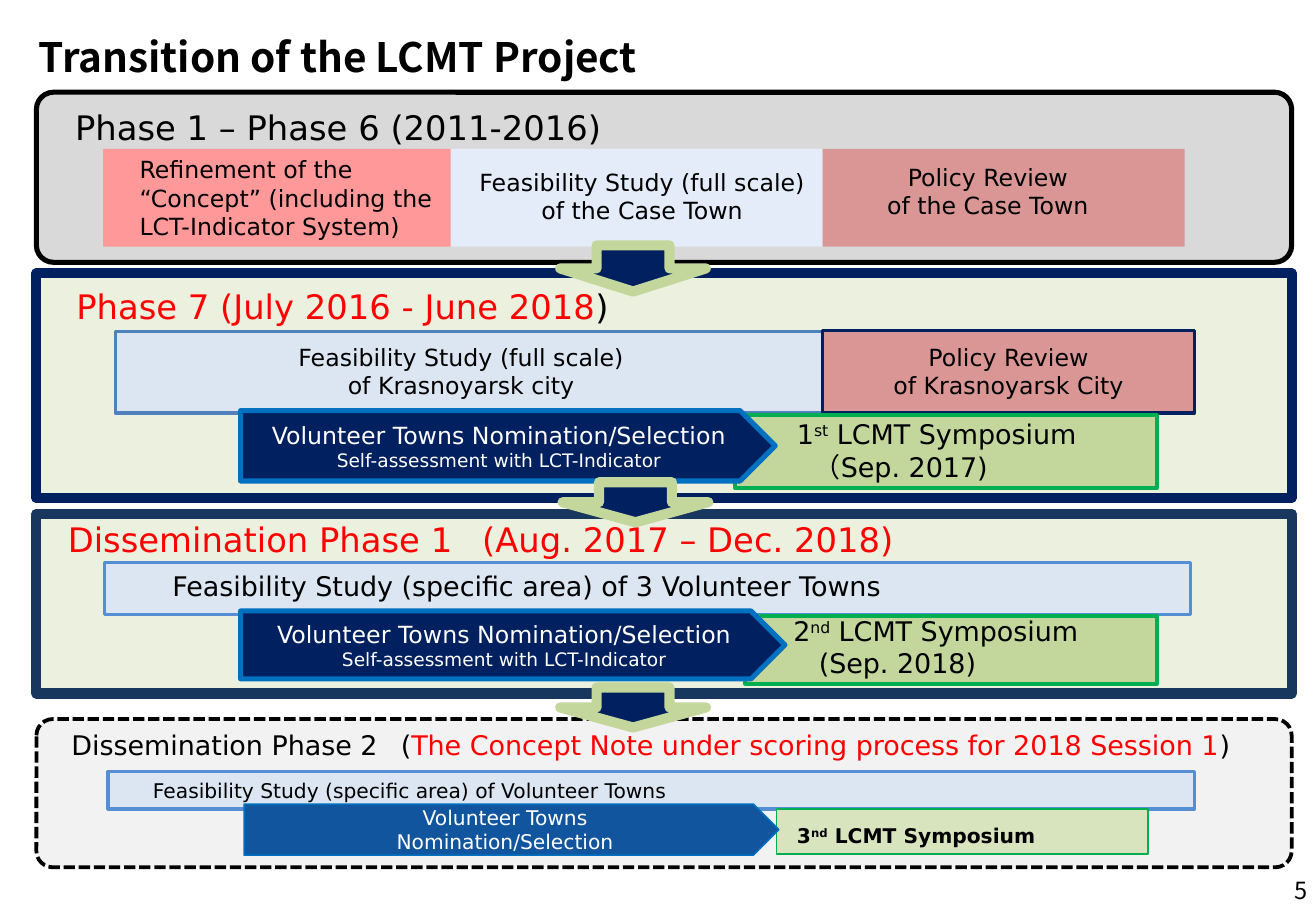
from lxml import etree
from pptx import Presentation
from pptx.dml.color import RGBColor
from pptx.enum.dml import MSO_LINE
from pptx.enum.shapes import MSO_SHAPE
from pptx.enum.text import MSO_ANCHOR, PP_ALIGN
from pptx.oxml.ns import qn
from pptx.util import Inches, Pt

RECT, ROUNDED = MSO_SHAPE.RECTANGLE, MSO_SHAPE.ROUNDED_RECTANGLE
PENTAGON, DOWN_ARROW = MSO_SHAPE.PENTAGON, MSO_SHAPE.DOWN_ARROW
LEFT, CENTER, RIGHT = PP_ALIGN.LEFT, PP_ALIGN.CENTER, PP_ALIGN.RIGHT
TOP, MIDDLE = MSO_ANCHOR.TOP, MSO_ANCHOR.MIDDLE
DASH = MSO_LINE.SQUARE_DOT

BODY_FONT, TITLE_FONT = "DejaVu Sans", "Noto Sans CJK JP"
BLACK, WHITE, RED = "000000", "FFFFFF", "FF0000"
NAVY, BLUE, SKY, PALE_BLUE = "002060", "0070C0", "558ED5", "DCE6F2"
GREEN, LEAF, PALE_GREEN = "00B050", "C3D69B", "EBF1DE"
ROSE = "D99694"
SUPER = "super"
CELL = 0.1  # grid cell in inches: 108.3 columns by 75 rows
PANEL_LEFT, PANEL_WIDTH = 3, 103.3


def rgb(color):
    return RGBColor.from_string(color)


def grid(cells):
    return Inches(round(cells * CELL, 3))


class Board:
    def __init__(self):
        self.deck = Presentation()
        self.deck.slide_width, self.deck.slide_height = grid(108.3), grid(75)
        self.slide = self.deck.slides.add_slide(self.deck.slide_layouts[5])

    def fill_text(self, frame, paragraphs, sizes, color=BLACK, align=LEFT, anchor=TOP,
                  font=BODY_FONT, bold=False, indent=0, tab=0):
        """Each paragraph is a string or a list of (text, colour or SUPER) runs.

        The last size holds for all further paragraphs; indent moves those after the first.
        """
        frame.word_wrap, frame.vertical_anchor = True, anchor
        for index, content in enumerate(paragraphs):
            paragraph = frame.paragraphs[0] if index == 0 else frame.add_paragraph()
            paragraph.alignment = align
            style = paragraph.font
            style.name, style.bold = font, bold
            style.size = Pt(sizes[min(index, len(sizes) - 1)])
            style.color.rgb = rgb(color)
            runs = [(content, None)] if isinstance(content, str) else content
            for words, accent in runs:
                run = paragraph.add_run()
                run.text = words
                if accent == SUPER:
                    run.font._element.set("baseline", "30000")
                elif accent:
                    run.font.color.rgb = rgb(accent)
            properties = paragraph._p.get_or_add_pPr()
            if indent and index:
                properties.set("marL", str(grid(indent)))
            if tab:
                stops = etree.Element(qn("a:tabLst"))
                etree.SubElement(stops, qn("a:tab"), pos=str(grid(tab)), algn="l")
                properties.insert(0, stops)

    def title(self, words, box):
        heading = self.slide.shapes.title
        heading.left, heading.top, heading.width, heading.height = map(grid, box)
        self.fill_text(heading.text_frame, [words], [24], anchor=MIDDLE, font=TITLE_FONT,
                       bold=True)

    def text(self, box, paragraphs, sizes, **style):
        label = self.slide.shapes.add_textbox(*map(grid, box))
        self.fill_text(label.text_frame, paragraphs, sizes, **style)

    def shape(self, kind, box, fill, line=None, weight=2, corner=None, dash=None):
        block = self.slide.shapes.add_shape(kind, *map(grid, box))
        block.shadow.inherit = False
        block.fill.solid()
        block.fill.fore_color.rgb = rgb(fill)
        if corner is not None:
            block.adjustments[0] = corner
        if line:
            block.line.color.rgb, block.line.width = rgb(line), Pt(weight)
            if dash:
                block.line.dash_style = dash
        else:
            block.line.fill.background()
        return block

    def panel(self, kind, top, height, fill, line, weight, **outline):
        self.shape(kind, (PANEL_LEFT, top, PANEL_WIDTH, height), fill, line, weight, **outline)

    def nomination(self, box, paragraphs, sizes, fill=NAVY, weight=3):
        block = self.shape(PENTAGON, box, fill, BLUE, weight)
        self.fill_text(block.text_frame, paragraphs, sizes, WHITE, CENTER, MIDDLE)

    def symposium(self, box, fill, weight, label_box, ordinal, date, sizes, **style):
        self.shape(RECT, box, fill, GREEN, weight)
        number, suffix = ordinal
        name = [(number, None), (suffix, SUPER), (" LCMT Symposium", None)]
        self.text(label_box, [name] + date, sizes, **style)


def main():
    board = Board()
    board.title("Transition of the LCMT Project", (2.2, 2.1, 104, 5))
    board.text((83.3, 71.3, 25.3, 4), ["5"], [14], align=RIGHT, anchor=MIDDLE, font=TITLE_FONT)

    # Phase 1 to 6
    board.panel(ROUNDED, 7.6, 14, "D9D9D9", BLACK, 3, corner=0.1)
    board.text((5.2, 8.3, 92, 4.4), ["Phase 1 – Phase 6 (2011-2016)"], [20])
    for left, width, fill in ((8.5, 28.6, "FF9999"), (37.1, 30.6, "E3ECF8"), (67.7, 29.8, ROSE)):
        board.shape(RECT, (left, 12.25, width, 8.05), fill)
    board.text((10.5, 12.3, 27.4, 8.1),
               ["Refinement of the “Concept” (including the LCT-Indicator System)"], [14])

    # Phase 7
    board.panel(RECT, 22.5, 18.5, PALE_GREEN, NAVY, 6)
    board.text((5.3, 23, 49.3, 4.4), [[("Phase 7 (July 2016 - June 2018", RED), (")", None)]], [20])
    board.shape(RECT, (9.5, 27.3, 58.3, 6.7), PALE_BLUE, "4F81BD")
    board.shape(RECT, (67.7, 27.2, 30.6, 6.8), ROSE, NAVY)

    study, review = "Feasibility Study (full scale)", "Policy Review"
    for box, topic, place in (
        ((38.2, 13.3, 29.3, 5.7), study, "of the Case Town"),
        ((71.5, 12.9, 19.6, 5.7), review, "of the Case Town"),
        ((22.7, 27.7, 30.5, 5.7), study, "of Krasnoyarsk city"),
        ((72.4, 27.7, 21.2, 5.7), review, "of Krasnoyarsk City"),
    ):
        board.text(box, [topic, place], [14], align=CENTER)

    # Dissemination phase 1
    board.panel(RECT, 42.3, 14.8, PALE_GREEN, "17375E", 6)
    board.text((4.6, 42.2, 72.1, 4.4), ["Dissemination Phase 1\t(Aug. 2017 – Dec. 2018)"],
               [20], color=RED, tab=34.1)
    board.shape(RECT, (8.6, 46.3, 89.4, 4.3), PALE_BLUE, SKY)
    board.text((13.2, 46.4, 85.1, 3.7),
               ["Feasibility Study (specific area) of 3 Volunteer Towns"], [16])

    board.symposium((60.5, 34.2, 34.7, 6), LEAF, 2.25, (64.6, 33.9, 30.5, 6.4),
                    ("1", "st"), ["（Sep. 2017)"], [16], indent=1.4)
    board.symposium((61.3, 50.7, 33.9, 5.6), LEAF, 2.25, (64.3, 50.1, 26.2, 6.4),
                    ("2", "nd"), ["(Sep. 2018)"], [16], indent=2.1)
    for box in ((19.8, 33.8, 44, 5.8), (19.8, 50.3, 44.8, 5.6)):
        board.nomination(box, ["Volunteer Towns Nomination/Selection",
                               "Self-assessment with LCT-Indicator"], [14, 11])

    # Dissemination phase 2
    board.panel(ROUNDED, 59.2, 12.2, "F2F2F2", BLACK, 2.25, corner=0.11, dash=DASH)
    board.text((4.9, 59.5, 99.6, 3.7),
               [[("Dissemination Phase 2\t(", None),
                 ("The Concept Note under scoring process for 2018 Session 1", RED),
                 (")", None)]], [16], tab=27.1)
    board.shape(RECT, (8.9, 63.5, 89.4, 3.1), PALE_BLUE, SKY)
    board.text((11.6, 63.6, 85.1, 3),
               ["Feasibility Study (specific area) of Volunteer Towns"], [12])
    board.symposium((63.9, 66.6, 30.6, 3.7), "D7E4BD", 1, (64.6, 67.3, 21.9, 3),
                    ("3", "nd"), [], [12], bold=True)
    board.nomination((20.1, 66.2, 44, 4.2), ["Volunteer Towns", "Nomination/Selection"],
                     [12], "11559F", 1)

    for left, top, height in ((46.1, 20.2, 3.8), (46.3, 39.7, 3.3), (46.1, 56.6, 3.3)):
        board.shape(DOWN_ARROW, (left, top, 12, height), NAVY, LEAF, 6)

    board.deck.save("out.pptx")


if __name__ == "__main__":
    main()
